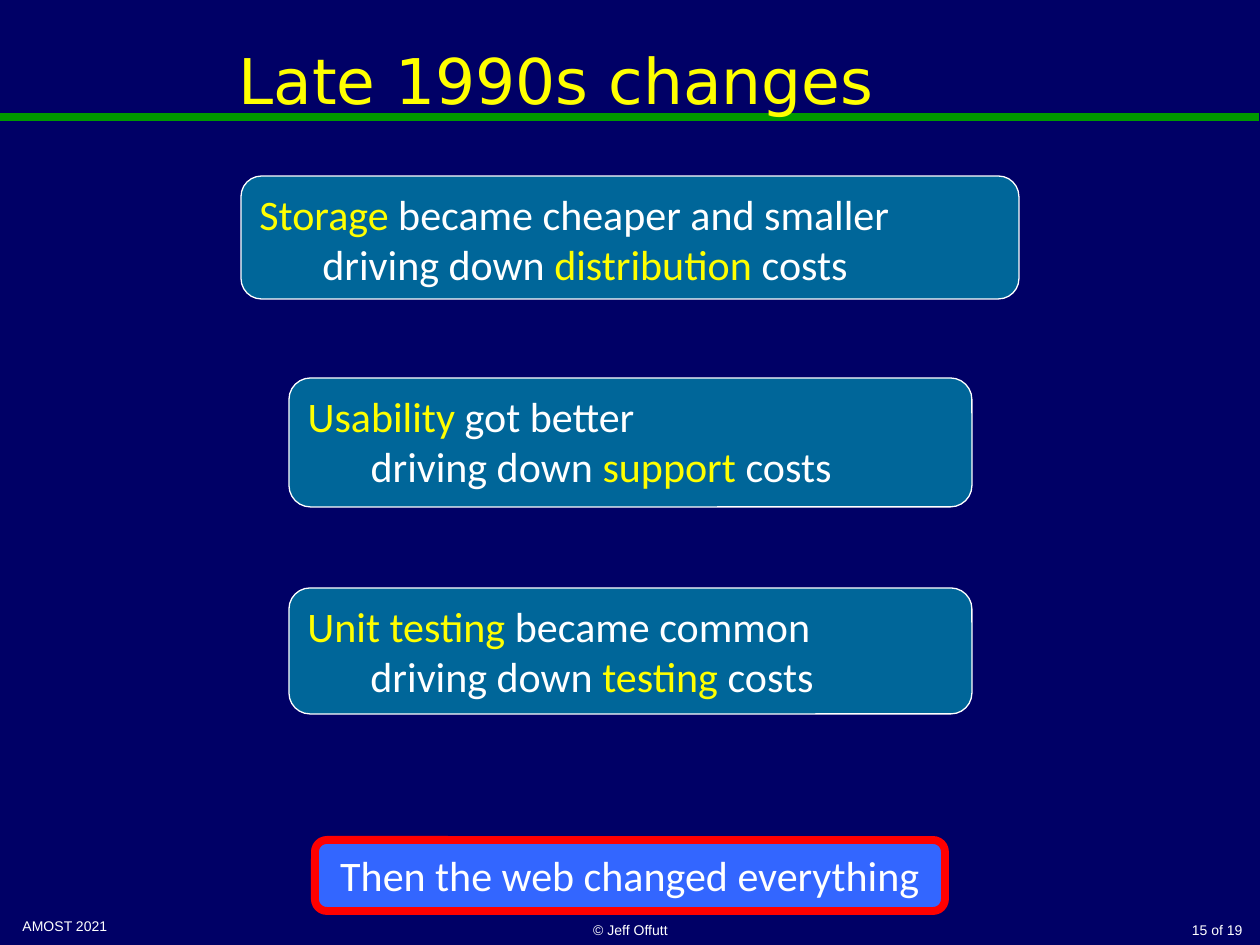
"""Build the slide on late 1990s changes in software costs."""
from pptx import Presentation
from pptx import util as u
from pptx.dml.color import RGBColor
from pptx.enum import shapes, text
from pptx.oxml import ns
from lxml import etree

PX = 914400 // 126
NAVY = RGBColor(0x00, 0x00, 0x66)
GREEN = RGBColor(0x00, 0x99, 0x00)
TEAL = RGBColor(0x00, 0x66, 0x99)
BLUE = RGBColor(0x33, 0x66, 0xFF)
RED = RGBColor(0xFF, 0x00, 0x00)
WHITE = RGBColor(0xFF, 0xFF, 0xFF)
YELLOW = RGBColor(0xFF, 0xFF, 0x00)
LEFT, MID, RIGHT = text.PP_ALIGN.LEFT, text.PP_ALIGN.CENTER, text.PP_ALIGN.RIGHT
TOP, CENTER, LOW = text.MSO_ANCHOR.TOP, text.MSO_ANCHOR.MIDDLE, text.MSO_ANCHOR.BOTTOM

deck = Presentation()
deck.slide_width, deck.slide_height = 1260 * PX, 945 * PX
slide = deck.slides.add_slide(deck.slide_layouts[6])
slide.background.fill.solid()
slide.background.fill.fore_color.rgb = NAVY


def write(para, parts, face, size, align=LEFT):
    for words, color in parts:
        run = para.add_run()
        run.text = words
        run.font.color.rgb = color
    para.font.name, para.font.size = face, u.Pt(size)
    para.alignment = align


def panel(place, fill, edge, width):
    box = slide.shapes.add_shape(shapes.MSO_SHAPE.ROUNDED_RECTANGLE, *[n * PX for n in place])
    box.shadow.inherit = False
    box.fill.solid()
    box.fill.fore_color.rgb = fill
    box.line.color.rgb = edge
    box.line.width = u.Pt(width)
    box.text_frame.word_wrap = True
    box.text_frame.vertical_anchor = TOP
    return box.text_frame


rule = slide.shapes.add_connector(shapes.MSO_CONNECTOR.STRAIGHT, 0, 117 * PX, 1259 * PX, 117 * PX)
rule.line.color.rgb = GREEN
rule.line.width = u.Pt(4.5)
etree.SubElement(rule._element.spPr, ns.qn("a:effectLst"))

labels = [
    ("of 19", (1197, 915, 58, 30), WHITE, "Arial", 8, RIGHT, TOP),
    ("Late 1990s changes", (10, 0, 1092, 158), YELLOW, "DejaVu Sans", 36, MID, CENTER),
    ("AMOST 2021", (10, 911, 294, 33), WHITE, "Arial", 8, LEFT, TOP),
    ("© Jeff Offutt", (431, 911, 399, 34), WHITE, "Arial", 8, MID, LOW),
    ("15", (992, 911, 228, 34), WHITE, "Arial", 8, RIGHT, LOW),
]
for words, place, color, face, size, align, anchor in labels:
    frame = slide.shapes.add_textbox(*[n * PX for n in place]).text_frame
    frame.word_wrap = True
    frame.vertical_anchor = anchor
    write(frame.paragraphs[0], [(words, color)], face, size, align)

trends = [
    ((241, 176, 778, 123), "Storage", " became cheaper and smaller", "distribution"),
    ((289, 378, 683, 129), "Usability", " got better", "support"),
    ((289, 588, 683, 126), "Unit testing", " became common", "testing"),
]
for place, cause, change, cost in trends:
    frame = panel(place, TEAL, WHITE, 0.75)
    write(frame.paragraphs[0], [(cause, YELLOW), (change, WHITE)], "Calibri", 24)
    effect = [("\tdriving down ", WHITE), (cost, YELLOW), (" costs", WHITE)]
    write(frame.add_paragraph(), effect, "Calibri", 24)

frame = panel((315, 840, 630, 71), BLUE, RED, 4.5)
write(frame.paragraphs[0], [("Then the web changed everything", WHITE)], "Calibri", 24, MID)

deck.save("out.pptx")
